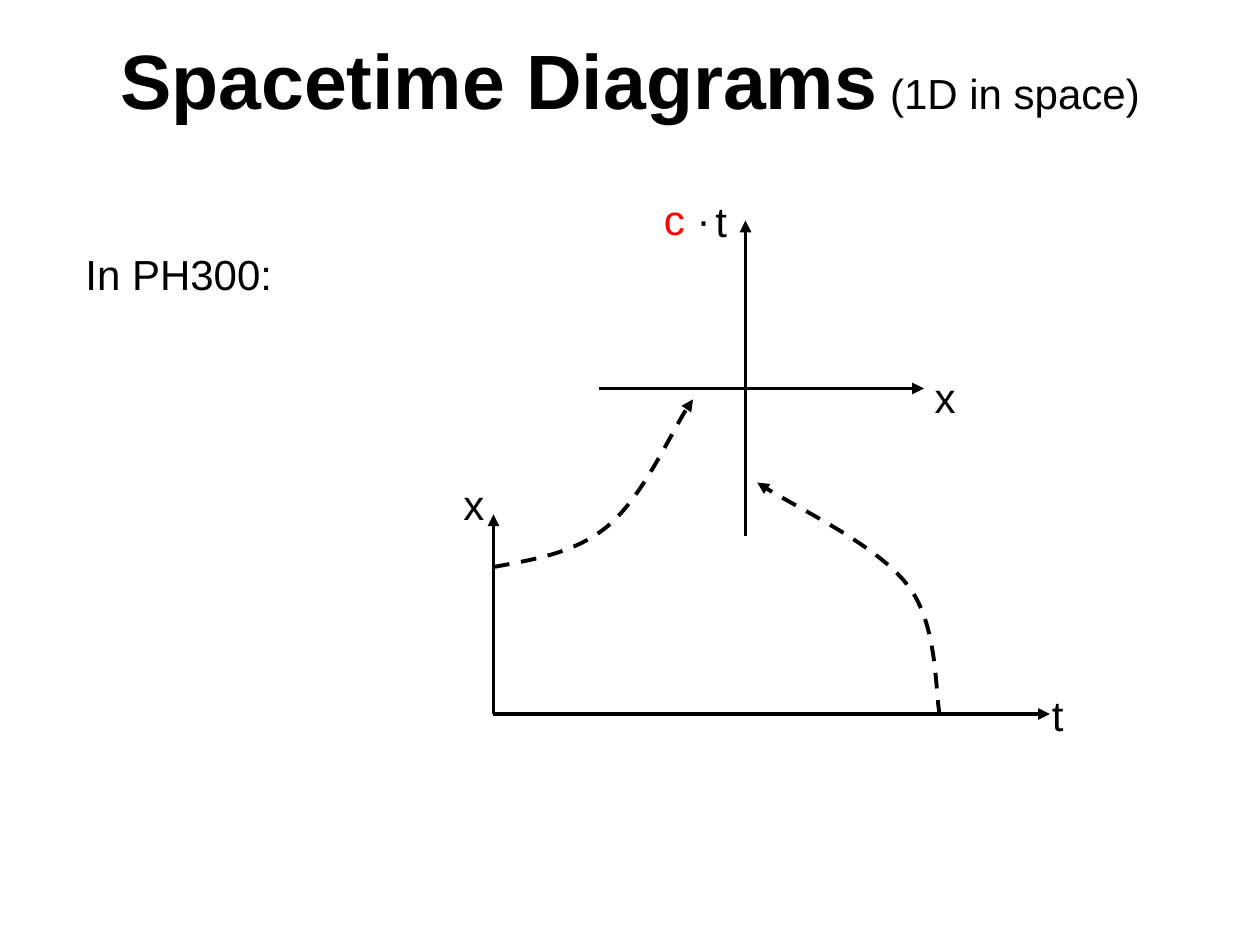
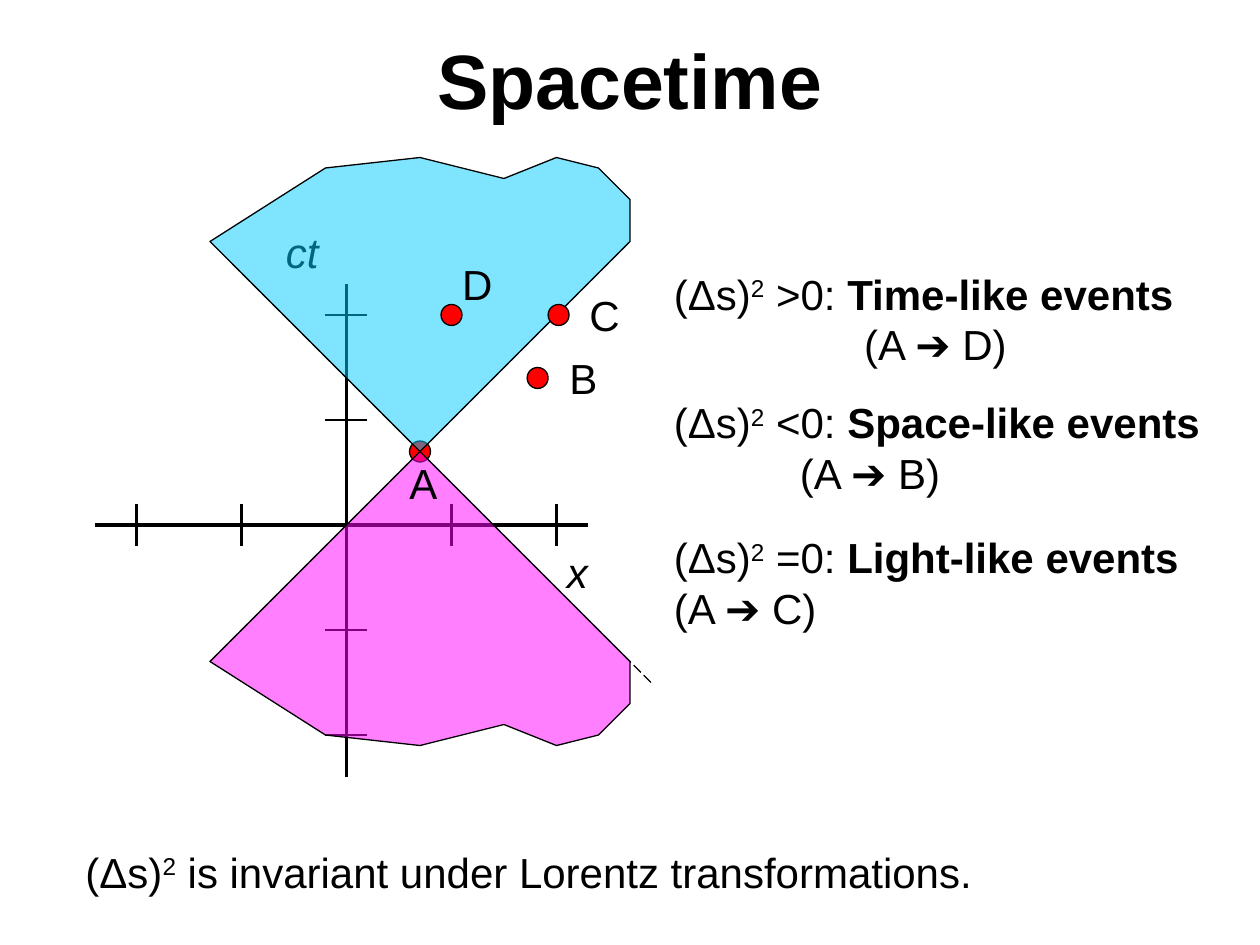
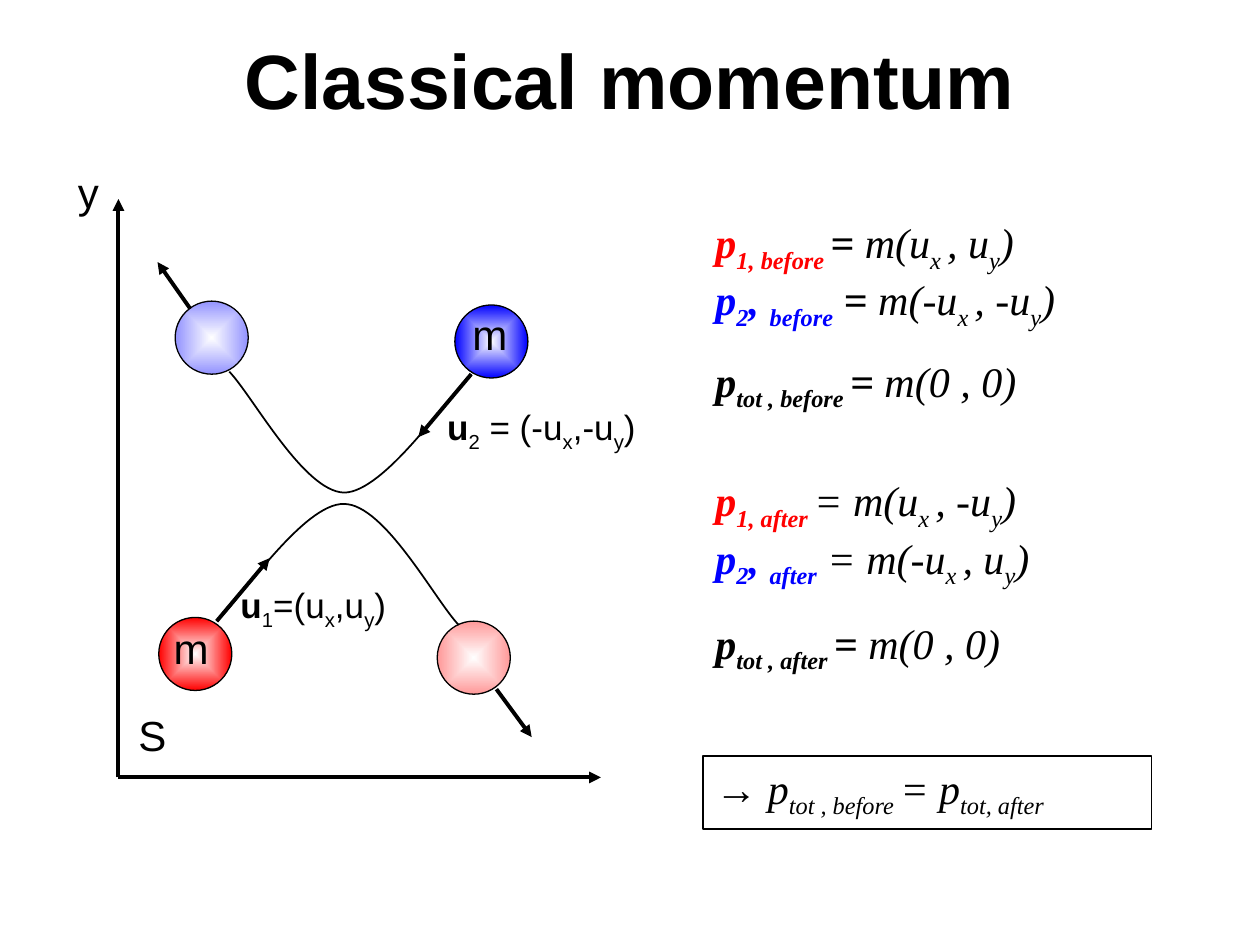
"""Build three slides on spacetime diagrams and classical momentum."""
from lxml.etree import SubElement
from pptx import Presentation
from pptx.dml.color import RGBColor
from pptx.enum.dml import MSO_LINE
from pptx.enum.shapes import MSO_CONNECTOR as LINK, MSO_SHAPE as SHAPE
from pptx.enum.text import MSO_ANCHOR, MSO_AUTO_SIZE as FIT, PP_ALIGN
from pptx.oxml.ns import qn
from pptx.util import Inches, Pt

COLOURS = {"black": "000000", "white": "FFFFFF", "red": "FF0000", "blue": "0000FF",
           "pink": "FF9999", "pale": "9393FF", "cyan": "00CCFF", "magenta": "FF00FF"}
SANS, SERIF = "Arial", "Times New Roman"
BASELINES = {"sub": "-25000", "sup": "30000"}
GRID = 12

TITLES = [
    [("Spacetime Diagrams", "bold"), (" (1D in space)", "small")],
    [("Spacetime", "bold")],
    [("Classical momentum", "bold")],
]

PLOT_AXES = [((47, 68), (100, 68)), ((47, 68), (47, 49)),
             ((57, 37), (88, 37)), ((71, 51), (71, 21))]
PLOT_LABELS = [
    ((0.58, 1.92, 1.7, 0.5), [("In PH300:", "")]),
    ((8.25, 5.42, 0.31, 0.57), [("t", "")]),
    ((3.58, 3.75, 0.4, 0.57), [("x", "")]),
    ((7.32, 2.9, 0.4, 0.57), [("x", "")]),
    ((5.58, 1.5, 0.31, 0.57), [("t", "")]),
    ((5.17, 1.49, 0.65, 0.51), [("c ", "red"), ("·", "")]),
]
AXIS_SWAPS = [
    [(3.92, 4.5), (4.24, 4.44), (4.57, 4.39), (4.83, 4.17),
     (5.1, 3.94), (5.38, 3.32), (5.5, 3.17)],
    [(7.46, 5.68), (7.42, 5.51), (7.45, 4.95), (7.2, 4.64),
     (6.96, 4.33), (6.26, 4), (6.01, 3.83)],
]

ORIGIN, APEX = (33, 50), (40, 43)
CONE_EDGE = [(-20, 20), (-9, 27), (0, 28), (8, 26), (13, 28), (17, 27), (20, 24), (20, 20)]
CONES = [("cyan", -1), ("magenta", 1)]
LIGHT_RAYS = [((20, 63), (60, 23)), ((62, 65), (22, 25))]
EVENTS = [(51.2, 36), (53.2, 30), (42, 30 + 0)]
EVENTS[2] = (43, 30)
EVENT_LABELS = [("A", (3.15, 3.58)), ("B", (4.42, 2.75)), ("C", (4.58, 2.25)), ("D", (3.57, 2))]
AXIS_NAMES = [("x", (4.4, 4.29, 0.37, 0.5)), ("ct", (2.17, 1.75, 0.46, 0.5))]
INTERVALS = [
    ((5.25, 2.08, 4.5, 1.18), " >0: ", "Time-like events \t", "(A ➔ D)", 1.51),
    ((5.25, 3.1, 4.42, 1.31), " <0: ", "Space-like events \t\t", "(A ➔ B)", 0),
    ((5.25, 4.17, 4.5, 1.31), " =0: ", "Light-like events \t\t", "(A ➔ C)", 0),
]
INVARIANCE = " is invariant under Lorentz transformations."

BALL = 0.58
BALLS = [("red", 1.26, 4.9), ("pink", 3.47, 4.93), ("blue", 3.61, 2.42), ("pale", 1.39, 2.39)]
MOTIONS = [((1.72, 4.93), (2.14, 4.43)), ((3.94, 5.47), (4.22, 5.85)),
           ((3.74, 2.97), (3.32, 3.47)), ((1.51, 2.45), (1.25, 2.08)),
           ((0.94, 6.17), (4.77, 6.17)), ((0.94, 6.17), (0.94, 1.58))]
TRACKS = [
    [(1.72, 4.93), (1.89, 4.78), (2.41, 3.99), (2.73, 4), (3.05, 4), (3.45, 4.76), (3.64, 4.96)],
    [(3.74, 2.97), (3.57, 3.13), (3.05, 3.91), (2.73, 3.91), (2.41, 3.9), (2.01, 3.15), (1.82, 2.95)],
]
FRAME_LABELS = [("y", (0.52, 1.27, 0.4, 0.57)), ("m", (1.28, 4.89, 0.53, 0.57)),
                ("m", (3.65, 2.4, 0.53, 0.57)), ("S", (1, 5.58, 0.46, 0.57))]
VELOCITIES = [("1", "=(u", ",u", (1.81, 4.58, 1.38, 0.43)),
              ("2", " = (-u", ",-u", (3.45, 3.17, 1.72, 0.43))]
MOMENTA = [("before", ", u", ", -u", "bold", (5.58, 1.67, 3.51, 1.03)),
           ("after", ", -u", ", u", "", (5.58, 3.72, 3.24, 1.03))]
TOTALS = [("before", (5.58, 2.77, 3.14, 0.57)), ("after", (5.58, 4.85, 2.96, 0.57))]
CONSERVED = [("→ ", ""), ("p", "italic"), ("tot , before ", "italic sub"),
             ("= p", "italic"), ("tot, after", "italic sub")]


def rgb(name):
    return RGBColor.from_string(COLOURS[name])


def cells(*points):
    return [(x / GRID, y / GRID) for x, y in points]


def emu(points):
    return [(Inches(x), Inches(y)) for x, y in points]


def write(paragraph, runs, size, font=SANS):
    for words, style in runs:
        traits = style.split()
        run = paragraph.add_run()
        run.text = words
        run.font.name = font
        run.font.size = Pt(24 if "small" in traits else size)
        run.font.bold = "bold" in traits
        run.font.italic = "italic" in traits
        run.font.color.rgb = rgb(next((t for t in traits if t in COLOURS), "black"))
        for trait in traits:
            if trait in BASELINES:
                run.font._element.set("baseline", BASELINES[trait])


def add_text(slide, place, *lines, size=24, font=SANS, wrap=False, hang=0):
    box = slide.shapes.add_textbox(*map(Inches, place))
    frame = box.text_frame
    frame.word_wrap = wrap
    frame.auto_size = FIT.SHAPE_TO_FIT_TEXT
    for number, runs in enumerate(lines):
        paragraph = frame.add_paragraph() if number else frame.paragraphs[0]
        if hang:
            margins = paragraph._p.get_or_add_pPr()
            margins.set("marL", str(Inches(hang)))
            margins.set("indent", str(-Inches(hang)))
        write(paragraph, runs, size, font)
    return box


def stroke(part, width, dash=None, arrow=False):
    part.line.color.rgb = rgb("black")
    part.line.width = Pt(width)
    if dash:
        part.line.dash_style = dash
    if arrow:
        SubElement(part.line._get_or_add_ln(), qn("a:tailEnd"), type="triangle")


def add_line(slide, ends, width, **look):
    (x1, y1), (x2, y2) = emu(ends)
    link = slide.shapes.add_connector(LINK.STRAIGHT, x1, y1, x2, y2)
    stroke(link, width, **look)
    SubElement(link._element.spPr, qn("a:effectLst"))


def add_outline(slide, points, close):
    start, *others = emu(points)
    builder = slide.shapes.build_freeform(*start, scale=1.0)
    builder.add_line_segments(others, close=close)
    outline = builder.convert_to_shape()
    outline.shadow.inherit = False
    return outline


def add_curve(slide, points, width, **look):
    curve = add_outline(slide, points, close=False)
    curve.fill.background()
    stroke(curve, width, **look)
    track = next(curve._element.iter(qn("a:path")))
    segments = track.findall(qn("a:lnTo"))
    for first in range(0, len(segments), 3):
        bend = SubElement(track, qn("a:cubicBezTo"))
        for segment in segments[first:first + 3]:
            bend.append(segment[0])
            track.remove(segment)


def add_disc(slide, left, top, size):
    disc = slide.shapes.add_shape(SHAPE.OVAL, *map(Inches, (left, top, size, size)))
    disc.shadow.inherit = False
    stroke(disc, 0.75)
    return disc


def add_event(slide, centre):
    (left, top), = cells((centre[0] - 1, centre[1] - 1))
    event = add_disc(slide, left, top, 2 / GRID)
    event.fill.solid()
    event.fill.fore_color.rgb = rgb("red")


def add_ball(slide, colour, left, top):
    ball = add_disc(slide, left, top, BALL)
    ball.fill.gradient()
    for stop, shade, position in zip(ball.fill.gradient_stops, ("white", colour), (0, 1)):
        stop.color.rgb = rgb(shade)
        stop.position = position
    gradient = ball._element.spPr.find(qn("a:gradFill"))
    gradient.remove(gradient.find(qn("a:lin")))
    radial = SubElement(gradient, qn("a:path"), path="shape")
    SubElement(radial, qn("a:fillToRect"), {side: "50000" for side in "ltrb"})


def add_cone(slide, colour, direction):
    x, y = APEX
    edge = [(x + dx, y + direction * dy) for dx, dy in CONE_EDGE]
    cone = add_outline(slide, cells(APEX, *edge), close=True)
    cone.fill.solid()
    cone.fill.fore_color.rgb = rgb(colour)
    tint = next(cone._element.spPr.find(qn("a:solidFill")).iter(qn("a:srgbClr")))
    SubElement(tint, qn("a:alpha"), val="50000")
    stroke(cone, 0.75)


def add_titled_slide(deck, runs):
    slide = deck.slides.add_slide(deck.slide_layouts[5])
    title = slide.shapes.title
    title.left, title.top, title.width, title.height = map(Inches, (0.5, 0, 9, 1.25))
    title.text_frame.vertical_anchor = MSO_ANCHOR.MIDDLE
    title.text_frame.auto_size = FIT.NONE
    heading = title.text_frame.paragraphs[0]
    heading.alignment = PP_ALIGN.CENTER
    write(heading, runs, 44)
    return slide


def draw_diagrams(slide):
    for ends in PLOT_AXES:
        add_line(slide, cells(*ends), 2.25, arrow=True)
    for place, runs in PLOT_LABELS:
        add_text(slide, place, runs)
    for points in AXIS_SWAPS:
        add_curve(slide, points, 2.25, dash=MSO_LINE.DASH, arrow=True)


def draw_light_cone(slide):
    x, y = ORIGIN
    add_line(slide, cells((9, y), (56, y)), 2)
    add_line(slide, cells((x, 74), (x, 27)), 2)
    for name, place in AXIS_NAMES:
        add_text(slide, place, [(name, "italic")])
    for step in (-20, -10, 10, 20):
        add_line(slide, cells((x + step, y - 2), (x + step, y + 2)), 1.5)
        add_line(slide, cells((x + 2, y + step), (x - 2, y + step)), 1.5)
    for ends in LIGHT_RAYS:
        add_line(slide, cells(*ends), 0.75, dash=MSO_LINE.LONG_DASH)
    add_event(slide, APEX)
    for colour, direction in CONES:
        add_cone(slide, colour, direction)
    for centre in EVENTS:
        add_event(slide, centre)
    for name, corner in EVENT_LABELS:
        add_text(slide, (*corner, 0.43, 0.5), [(name, "")])
    interval = [("(Δs)", ""), ("2", "sup")]
    for place, sign, kind, pair, hang in INTERVALS:
        add_text(slide, place, interval + [(sign, ""), (kind, "bold"), (pair, "")],
                 wrap=True, hang=hang)
    add_text(slide, (0.58, 6.67, 9.08, 0.5), interval + [(INVARIANCE, "")], wrap=True)


def components(opening, x, between, style=""):
    low = style + " sub"
    return [(opening, style), (x, low), (between, style), ("y", low), (")", style)]


def draw_collision(slide):
    for colour, left, top in BALLS:
        add_ball(slide, colour, left, top)
    for ends in MOTIONS:
        add_line(slide, ends, 2.25, arrow=True)
    for points in TRACKS:
        add_curve(slide, points, 1)
    for name, place in FRAME_LABELS:
        add_text(slide, place, [(name, "")])
    for index, opening, between, place in VELOCITIES:
        add_text(slide, place, [("u", "bold"), (index, "sub")] + components(opening, "x", between),
                 size=20)
    for stage, between1, between2, weight, place in MOMENTA:
        first = [("p", "bold italic red"), (f"1, {stage} ", "bold italic sub red"),
                 ("= ", f"italic {weight}")]
        second = [("p", "bold italic blue"), ("2", "bold italic sub blue"),
                  (", ", "bold italic blue"), (stage, "bold italic sub blue"),
                  (" = ", f"italic {weight}")]
        add_text(slide, place, first + components("m(u", "x ", between1, "italic"),
                 second + components("m(-u", "x ", between2, "italic"), font=SERIF)
    for stage, place in TOTALS:
        add_text(slide, place, [("p", "bold italic"), (f"tot , {stage} ", "bold italic sub"),
                                ("= ", "bold italic"), ("m(0 , 0)", "italic")], font=SERIF)
    conclusion = add_text(slide, (5.58, 6, 3.56, 0.58), CONSERVED, font=SERIF)
    conclusion.text_frame.auto_size = FIT.NONE
    stroke(conclusion, 0.75)


def main():
    deck = Presentation()
    deck.slide_width, deck.slide_height = Inches(10), Inches(7.5)
    for title, draw in zip(TITLES, (draw_diagrams, draw_light_cone, draw_collision)):
        draw(add_titled_slide(deck, title))
    deck.save("out.pptx")


if __name__ == "__main__":
    main()
